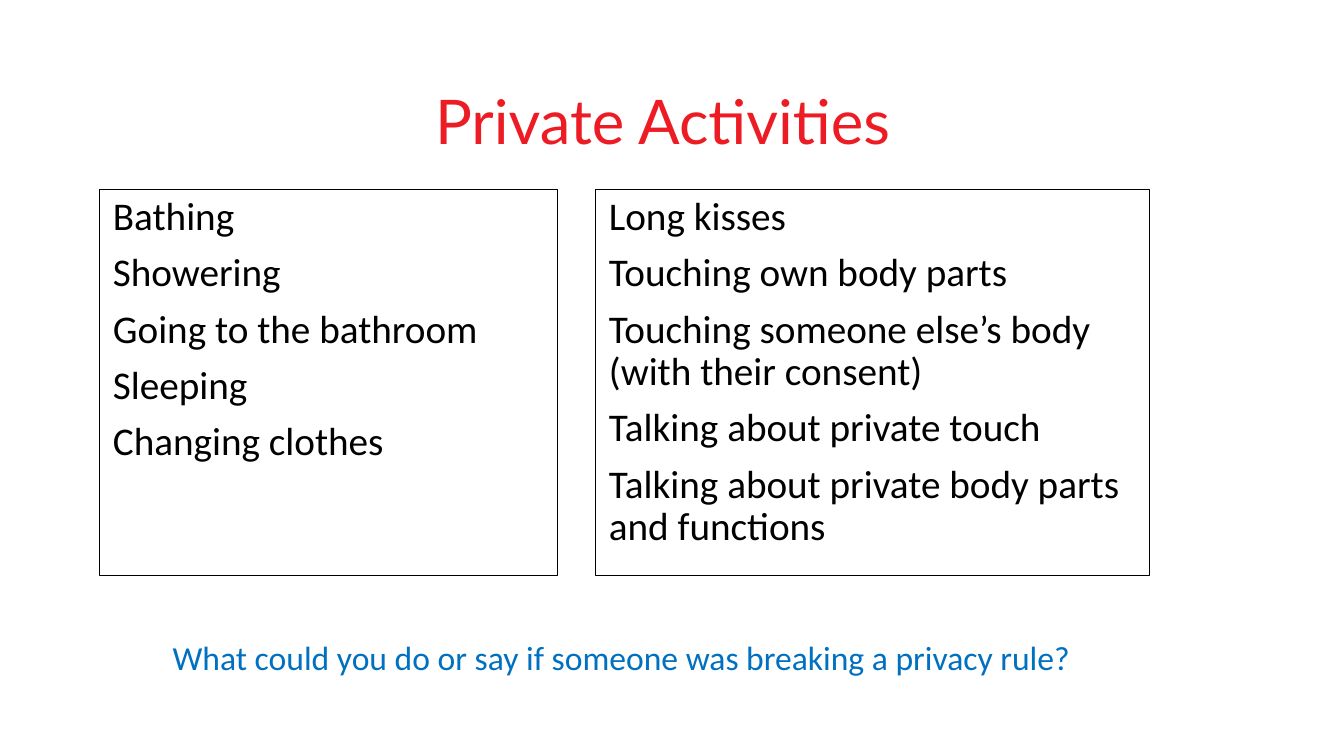
from pptx import Presentation
from pptx import util as u
from pptx.dml.color import RGBColor
from pptx.enum import shapes, text

TITLE = "Private Activities"
COLUMNS = [
    (71.3, 326.9, ["Bathing", "Showering", "Going to the bathroom", "Sleeping",
                   "Changing clothes"]),
    (425.5, 395.3, ["Long kisses", "Touching own body parts",
                    "Touching someone else’s body (with their consent)",
                    "Talking about private touch",
                    "Talking about\u00a0private body parts and functions"]),
]
QUESTION = "What could you do or say if someone was breaking a privacy rule?"

THEME = {
    "title": ("Lato", 44, "ED1C24"),
    "body": ("Calibri", 28, "000000"),
    "question": ("Calibri", 24, "0070C0"),
    "border": "000000",
}
COLUMN_TOP, COLUMN_HEIGHT = 135.4, 275.8
INSET_X, INSET_Y = 9.4, 5


def write(sp, lines, style, inset_y=INSET_Y, align=text.PP_ALIGN.LEFT,
          anchor=text.MSO_ANCHOR.TOP, spacing=1.0, before=0):
    tf = sp.text_frame
    tf.word_wrap = True
    tf.vertical_anchor = anchor
    tf.margin_left = tf.margin_right = u.Pt(INSET_X)
    tf.margin_top = tf.margin_bottom = u.Pt(inset_y)
    name, size, color = THEME[style]
    for i, line in enumerate(lines):
        p = tf.add_paragraph() if i else tf.paragraphs[0]
        p.text = line
        p.alignment = align
        p.line_spacing = spacing
        p.space_before = u.Pt(before if i else 0)
        p.font.name = name
        p.font.size = u.Pt(size)
        p.font.color.rgb = RGBColor.from_string(color)


def main():
    prs = Presentation()
    prs.slide_width, prs.slide_height = u.Pt(960), u.Pt(540)
    s = prs.slides.add_slide(prs.slide_layouts[6])

    title = s.shapes.add_textbox(u.Pt(65.5), u.Pt(43.9), u.Pt(815.8), u.Pt(90))
    write(title, [TITLE], "title", align=text.PP_ALIGN.CENTER,
          anchor=text.MSO_ANCHOR.MIDDLE, spacing=0.9)

    for left, width, activities in COLUMNS:
        sp = s.shapes.add_shape(shapes.MSO_SHAPE.RECTANGLE, u.Pt(left), u.Pt(COLUMN_TOP),
                                u.Pt(width), u.Pt(COLUMN_HEIGHT))
        sp.shadow.inherit = False
        sp.fill.background()
        sp.line.color.rgb = RGBColor.from_string(THEME["border"])
        sp.line.width = u.Pt(0.75)
        write(sp, activities, "body", spacing=0.9, before=10)

    question = s.shapes.add_textbox(u.Pt(113.9), u.Pt(445.7), u.Pt(758.2), u.Pt(94.3))
    write(question, [QUESTION], "question", inset_y=INSET_X)

    prs.save("out.pptx")


if __name__ == "__main__":
    main()
